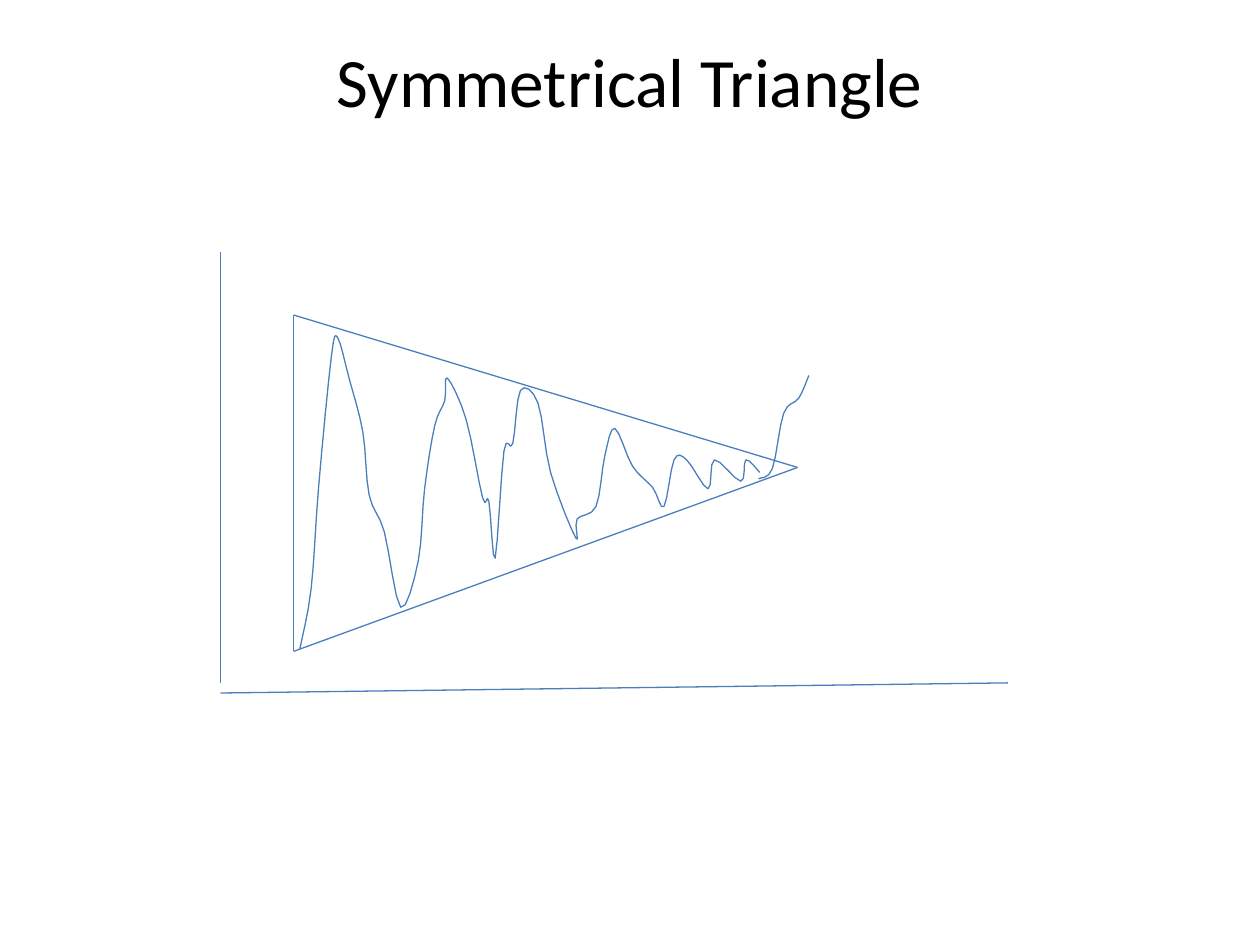
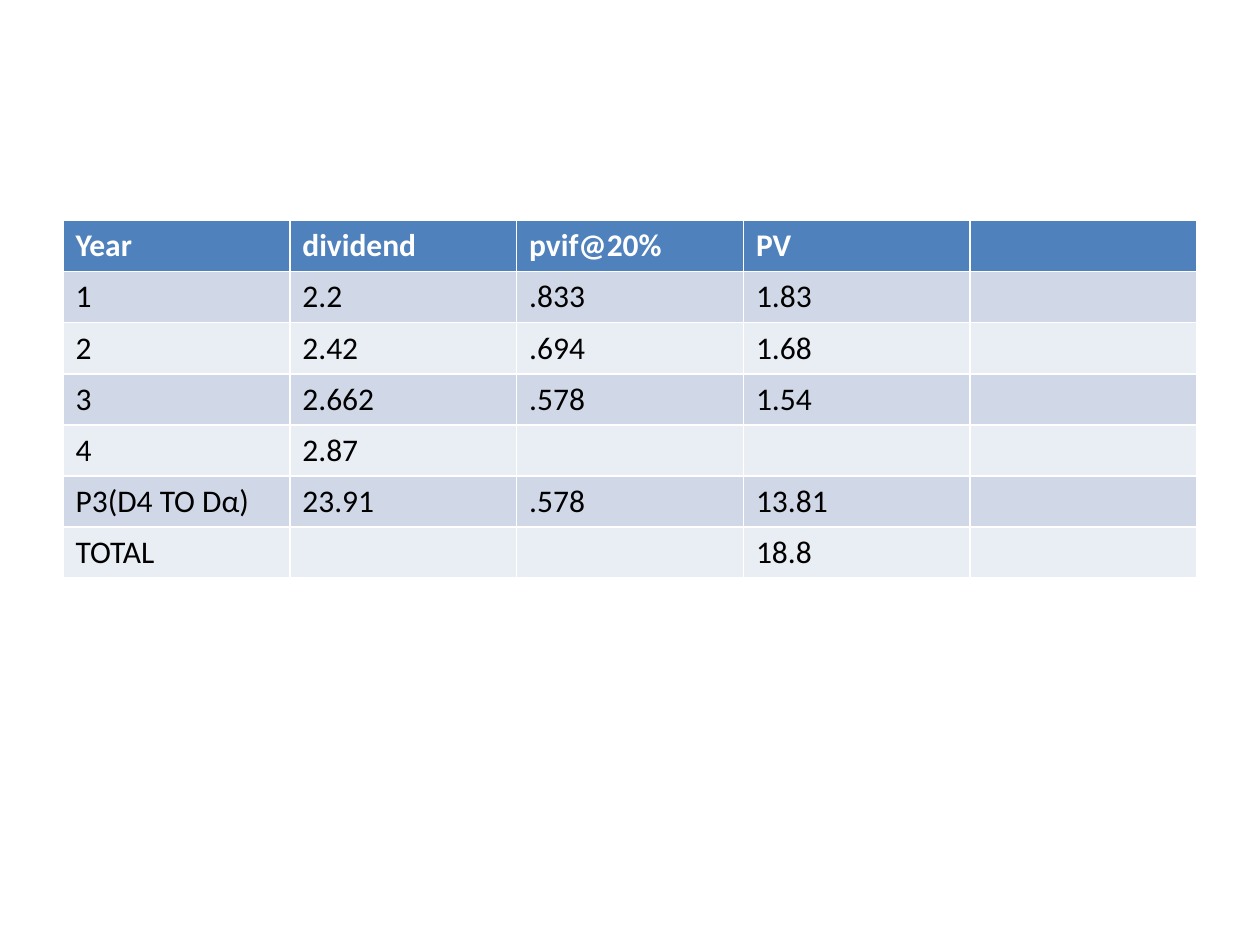
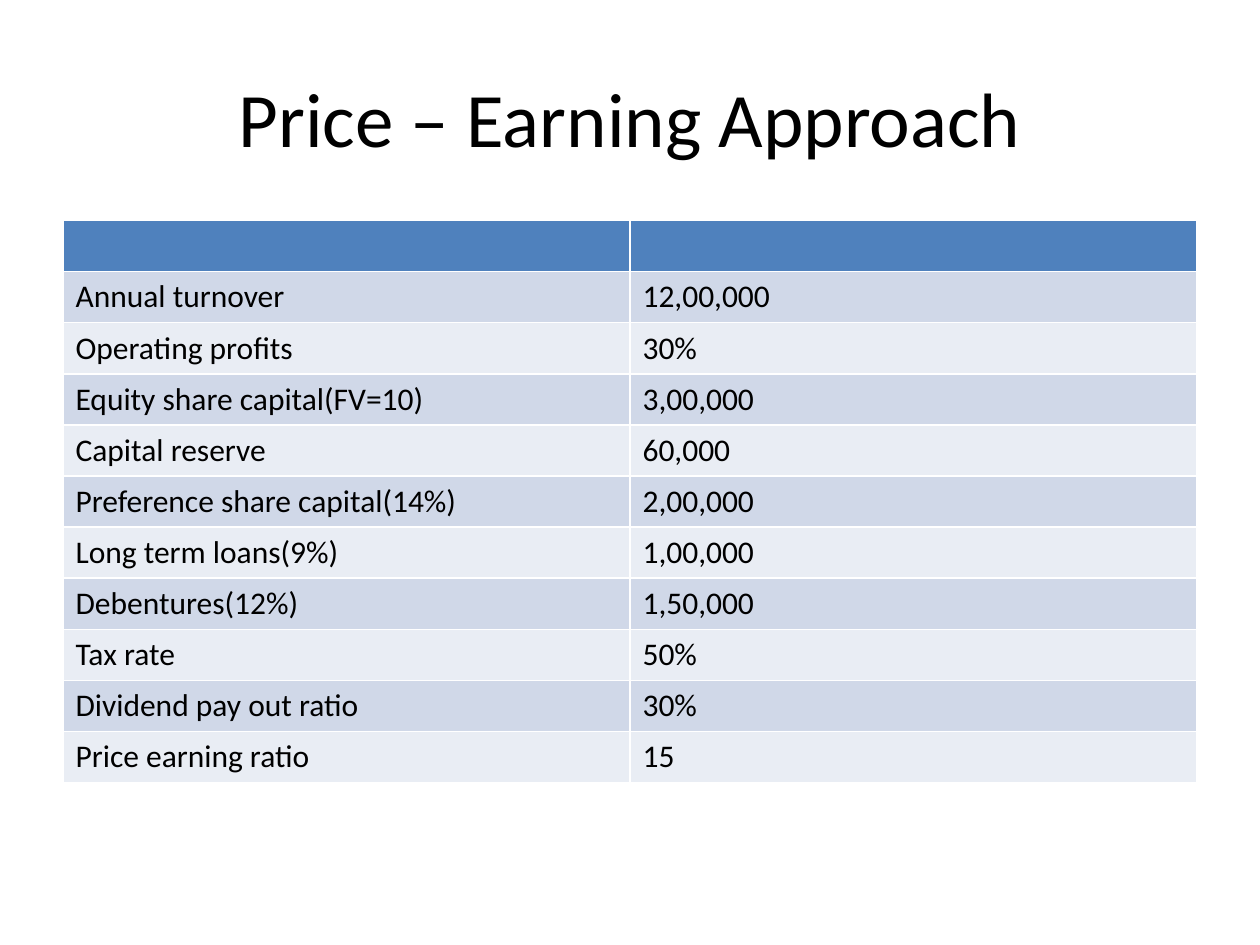
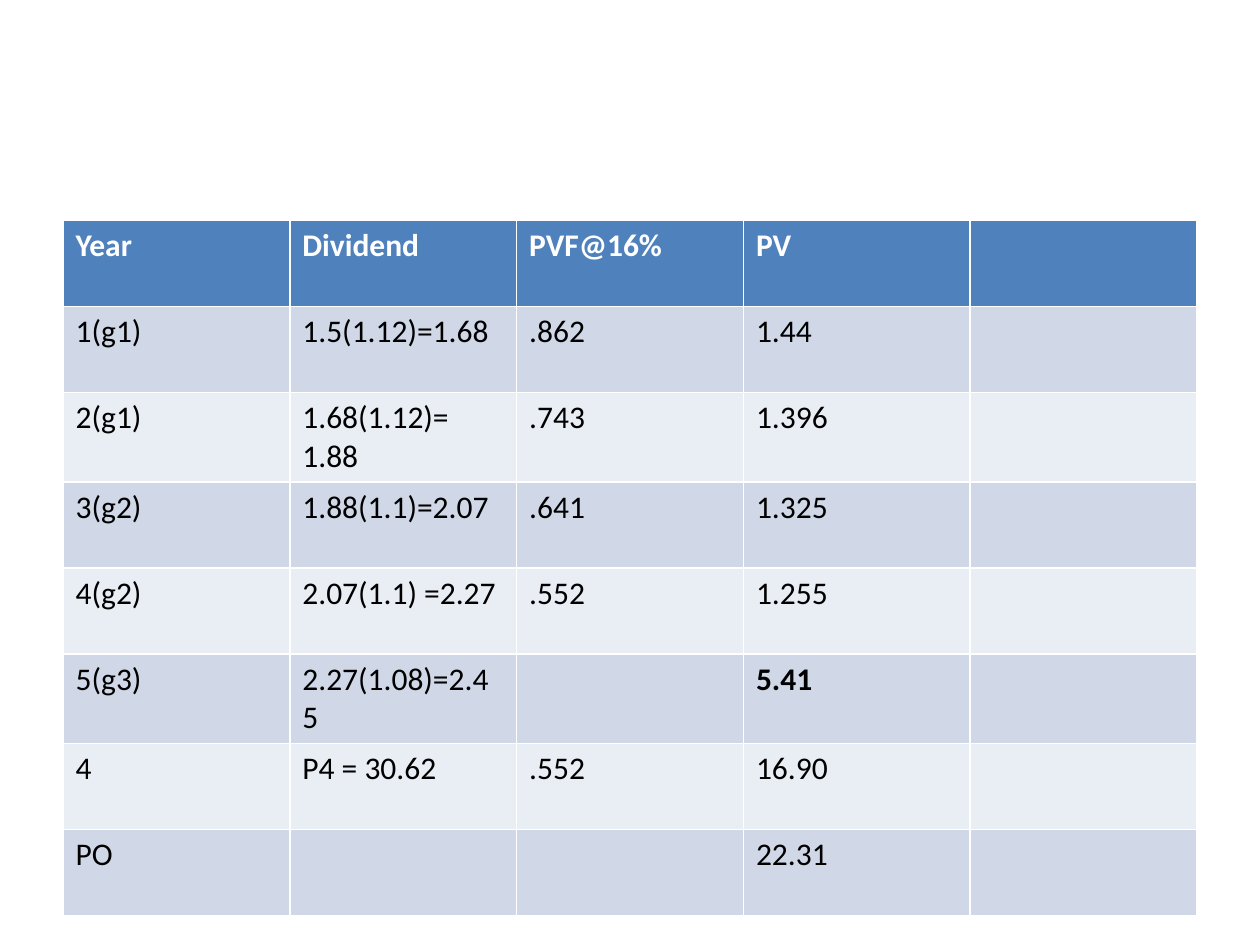
"""Build four slides on chart patterns and share valuation."""
import dataclasses
import itertools
import typing

import pptx
import pptx.dml.color
import pptx.enum.shapes
import pptx.enum.text
import pptx.oxml.ns
import pptx.presentation
import pptx.slide
import pptx.util
from lxml import etree

Inches = pptx.util.Inches
Pt = pptx.util.Pt
Color = pptx.dml.color.RGBColor
Anchor = pptx.enum.text.MSO_ANCHOR
Point = tuple[float, float]

TITLE_ONLY = 5
BLANK = 6
CURVE_STEPS = 4


@dataclasses.dataclass(frozen=True)
class Theme:
    font: str = "Calibri"
    text: Color = Color.from_string("000000")
    header_text: Color = Color.from_string("FFFFFF")
    header_fill: Color = Color.from_string("4F81BD")
    dark_band: Color = Color.from_string("D0D8E8")
    light_band: Color = Color.from_string("E9EDF4")
    stroke: Color = Color.from_string("4B7EBC")
    stroke_width: Pt = Pt(0.75)
    title_size: Pt = Pt(44)
    small_title_size: Pt = Pt(39.6)
    cell_size: Pt = Pt(18)


THEME = Theme()


class Segment(typing.NamedTuple):
    start: Point
    end: Point


@dataclasses.dataclass(frozen=True)
class Grid:
    rows: list[list[str]]
    height: float
    bold_cells: frozenset[str] = frozenset()


AXES = [Segment((1.75, 5.5), (8, 5.42)), Segment((1.75, 5.42), (1.75, 2))]
CORNERS = [(2.33, 2.5), (2.33, 5.17), (6.33, 3.71)]
TRIANGLE = [Segment(*ends) for ends in itertools.combinations(CORNERS, 2)]

PRICE_SWINGS: list[Point] = [
    (2.38, 5.15), (2.47, 4.67), (2.53, 3.85), (2.63, 2.83), (2.68, 2.68),
    (2.77, 3), (2.88, 3.43), (2.93, 3.93), (3.05, 4.22), (3.18, 4.82),
    (3.32, 4.45), (3.37, 3.88), (3.45, 3.38), (3.53, 3.18), (3.55, 3),
    (3.7, 3.33), (3.83, 3.95), (3.88, 3.98), (3.93, 4.43), (4, 3.58),
    (4.07, 3.52), (4.13, 3.1), (4.27, 3.2), (4.37, 3.75), (4.57, 4.27),
    (4.58, 4.12), (4.73, 4.02), (4.8, 3.62), (4.88, 3.4), (5.02, 3.7),
    (5.18, 3.87), (5.27, 4.02), (5.35, 3.65), (5.45, 3.65), (5.62, 3.88),
    (5.67, 3.65), (5.88, 3.82), (5.92, 3.65), (6.03, 3.75),
]
BREAKOUT: list[Point] = [
    (6.02, 3.8), (6.13, 3.72), (6.22, 3.28), (6.34, 3.16), (6.42, 2.98),
]

DIVIDENDS = Grid(
    rows=[
        ["Year", "dividend", "pvif@20%", "PV", ""],
        ["1", "2.2", ".833", "1.83", ""],
        ["2", "2.42", ".694", "1.68", ""],
        ["3", "2.662", ".578", "1.54", ""],
        ["4", "2.87", "", "", ""],
        ["P3(D4 TO Dα)", "23.91", ".578", "13.81", ""],
        ["TOTAL", "", "", "18.8", ""],
    ],
    height=2.84,
)
EARNINGS = Grid(
    rows=[
        ["", ""],
        ["Annual turnover", "12,00,000"],
        ["Operating profits", "30%"],
        ["Equity share capital(FV=10)", "3,00,000"],
        ["Capital reserve", "60,000"],
        ["Preference share capital(14%)", "2,00,000"],
        ["Long term loans(9%)", "1,00,000"],
        ["Debentures(12%)", "1,50,000"],
        ["Tax rate", "50%"],
        ["Dividend pay out ratio", "30%"],
        ["Price earning ratio", "15"],
    ],
    height=4.46,
)
GROWTH_STAGES = Grid(
    rows=[
        ["Year", "Dividend", "PVF@16%", "PV", ""],
        ["1(g1)", "1.5(1.12)=1.68", ".862", "1.44", ""],
        ["2(g1)", "1.68(1.12)= 1.88", ".743", "1.396", ""],
        ["3(g2)", "1.88(1.1)=2.07", ".641", "1.325", ""],
        ["4(g2)", "2.07(1.1) =2.27", ".552", "1.255", ""],
        ["5(g3)", "2.27(1.08)=2.45", "", "5.41", ""],
        ["4", "P4 = 30.62", ".552", "16.90", ""],
        ["PO", "", "", "22.31", ""],
    ],
    height=5.46,
    bold_cells=frozenset({"5.41"}),
)


def add_page(deck: pptx.presentation.Presentation, layout: int) -> pptx.slide.Slide:
    return deck.slides.add_slide(deck.slide_layouts[layout])


def set_title(page: pptx.slide.Slide, text: str, size: Pt, anchor: Anchor) -> None:
    box = page.shapes.title
    box.left, box.top, box.width, box.height = map(Inches, (0.5, 0.3, 9, 1.25))
    frame = box.text_frame
    frame.text = text
    frame.vertical_anchor = anchor
    if anchor == Anchor.TOP:
        frame.margin_top = 0
    para = frame.paragraphs[0]
    para.alignment = pptx.enum.text.PP_ALIGN.CENTER
    para.font.name = THEME.font
    para.font.size = size
    para.font.color.rgb = THEME.text


def style_stroke(shape: typing.Any) -> None:
    shape.line.color.rgb = THEME.stroke
    shape.line.width = THEME.stroke_width


def draw_segment(page: pptx.slide.Slide, segment: Segment) -> None:
    ends = map(Inches, (*segment.start, *segment.end))
    line = page.shapes.add_connector(pptx.enum.shapes.MSO_CONNECTOR.STRAIGHT, *ends)
    style_stroke(line)
    properties = line._element.find(pptx.oxml.ns.qn("p:spPr"))
    etree.SubElement(properties, pptx.oxml.ns.qn("a:effectLst"))


def blend(before: float, start: float, end: float, after: float, t: float) -> float:
    slope_in, slope_out = (end - before) / 2, (after - start) / 2
    bend = 3 * (end - start) - 2 * slope_in - slope_out
    twist = 2 * (start - end) + slope_in + slope_out
    return start + t * (slope_in + t * (bend + t * twist))


def smooth(points: list[Point]) -> list[Point]:
    padded = [points[0], *points, points[-1]]
    curve = [points[0]]
    for window in zip(padded, padded[1:], padded[2:], padded[3:]):
        for step in range(1, CURVE_STEPS + 1):
            x, y = (blend(*axis, step / CURVE_STEPS) for axis in zip(*window))
            curve.append((x, y))
    return curve


def draw_curve(page: pptx.slide.Slide, points: list[Point]) -> None:
    first, *rest = [(Inches(x), Inches(y)) for x, y in smooth(points)]
    builder = page.shapes.build_freeform(*first)
    builder.add_line_segments(rest, close=False)
    curve = builder.convert_to_shape()
    curve.shadow.inherit = False
    curve.fill.background()
    style_stroke(curve)


def draw_grid(page: pptx.slide.Slide, grid: Grid) -> None:
    row_count, column_count = len(grid.rows), len(grid.rows[0])
    frame = page.shapes.add_table(
        row_count, column_count,
        Inches(0.5), Inches(1.75), Inches(9), Inches(grid.height),
    )
    for row_index, texts in enumerate(grid.rows):
        is_header = row_index == 0
        band = THEME.dark_band if row_index % 2 else THEME.light_band
        for column_index, text in enumerate(texts):
            cell = frame.table.cell(row_index, column_index)
            cell.fill.solid()
            cell.fill.fore_color.rgb = THEME.header_fill if is_header else band
            cell.text = text
            font = cell.text_frame.paragraphs[0].font
            font.name = THEME.font
            font.size = THEME.cell_size
            font.bold = is_header or text in grid.bold_cells
            font.color.rgb = THEME.header_text if is_header else THEME.text


def main() -> None:
    deck = pptx.Presentation()
    deck.slide_width, deck.slide_height = Inches(10), Inches(7.5)

    page = add_page(deck, TITLE_ONLY)
    set_title(page, "Symmetrical Triangle", THEME.small_title_size, Anchor.TOP)
    for segment in AXES + TRIANGLE:
        draw_segment(page, segment)
    for points in (PRICE_SWINGS, BREAKOUT):
        draw_curve(page, points)

    draw_grid(add_page(deck, BLANK), DIVIDENDS)

    page = add_page(deck, TITLE_ONLY)
    set_title(page, "Price – Earning Approach", THEME.title_size, Anchor.MIDDLE)
    draw_grid(page, EARNINGS)

    draw_grid(add_page(deck, BLANK), GROWTH_STAGES)

    deck.save("out.pptx")


if __name__ == "__main__":
    main()
